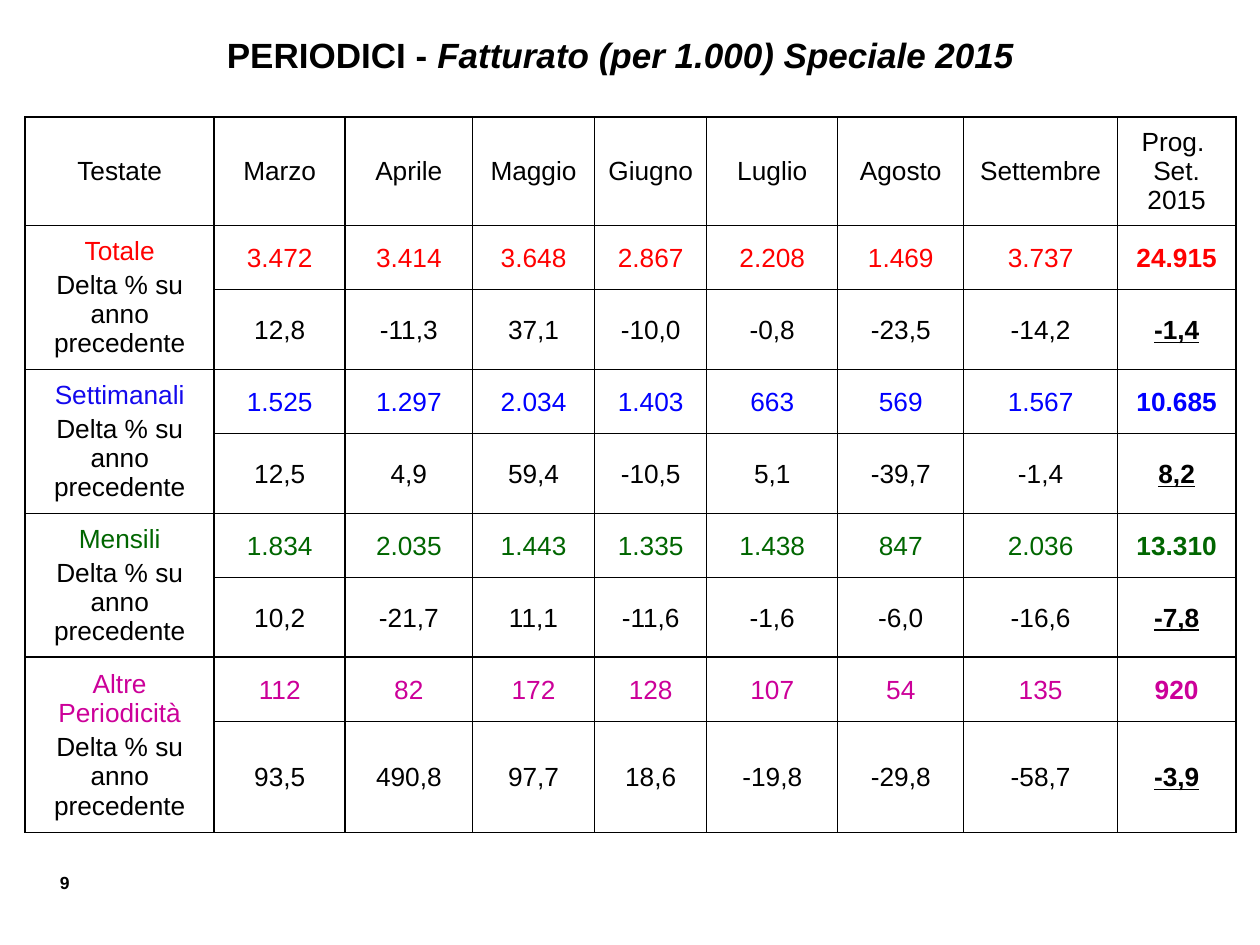
"""Build the slide on special 2015 periodical turnover by month."""
from lxml.etree import SubElement
from pptx import Presentation
from pptx.dml.color import RGBColor
from pptx.enum.text import MSO_ANCHOR, PP_ALIGN
from pptx.oxml.ns import qn
from pptx.util import Inches, Pt

MONTHS = ["Marzo", "Aprile", "Maggio", "Giugno", "Luglio", "Agosto", "Settembre"]
GROUPS = [
    ("Totale", "FF0000", "FF0000",
     "3.472 3.414 3.648 2.867 2.208 1.469 3.737 24.915",
     "12,8 -11,3 37,1 -10,0 -0,8 -23,5 -14,2 -1,4"),
    ("Settimanali", "1409ED", "0000FF",
     "1.525 1.297 2.034 1.403 663 569 1.567 10.685",
     "12,5 4,9 59,4 -10,5 5,1 -39,7 -1,4 8,2"),
    ("Mensili", "006600", "006600",
     "1.834 2.035 1.443 1.335 1.438 847 2.036 13.310",
     "10,2 -21,7 11,1 -11,6 -1,6 -6,0 -16,6 -7,8"),
    ("Altre Periodicità", "CC0099", "CC0099",
     "112 82 172 128 107 54 135 920",
     "93,5 490,8 97,7 18,6 -19,8 -29,8 -58,7 -3,9"),
]
COLUMN_WIDTHS = [1.5, 1.04, 1.01, 0.97, 0.89, 1.04, 1, 1.22, 0.94]
ROW_HEIGHTS = [0.86] + [0.51, 0.63] * 3 + [0.51, 0.88]
LABEL_MARGINS = (0.1, 0.05, 0.1, 0.05)
VALUE_MARGINS = (0.01, 0.01, 0.01, 0)


def rgb(value):
    return RGBColor.from_string(value)


class SlideWriter:
    font = "Arial"
    black = "000000"
    cell_size = 15
    border_width = 1

    def __init__(self, slide):
        self.slide = slide

    def format(self, paragraph, size, color=black, bold=False, align=PP_ALIGN.CENTER):
        paragraph.alignment = align
        font = paragraph.font
        font.name, font.size, font.bold = self.font, Pt(size), bold
        font.color.rgb = rgb(color)

    def title(self, lead, subject, box):
        heading = self.slide.shapes.title
        heading.left, heading.top, heading.width, heading.height = map(Inches, box)
        heading.text_frame.vertical_anchor = MSO_ANCHOR.MIDDLE
        paragraph = heading.text_frame.paragraphs[0]
        paragraph.add_run().text = lead
        italic_part = paragraph.add_run()
        italic_part.text = subject
        italic_part.font.italic = True
        self.format(paragraph, 20, bold=True)

    def page_number(self, number, box):
        frame = self.slide.shapes.add_textbox(*map(Inches, box)).text_frame
        frame.word_wrap = True
        frame.text = number
        self.format(frame.paragraphs[0], 10, bold=True, align=PP_ALIGN.RIGHT)

    def table(self, left, top, widths, heights):
        grid = self.slide.shapes.add_table(
            len(heights), len(widths), Inches(left), Inches(top),
            Inches(sum(widths)), Inches(sum(heights))).table
        grid.first_row = grid.horz_banding = False
        for column, width in zip(grid.columns, widths):
            column.width = Inches(width)
        for row, height in zip(grid.rows, heights):
            row.height = Inches(height)
        for cell in grid.iter_cells():
            self.border(cell)
            cell.fill.background()
        return grid

    def border(self, cell):
        properties = cell._tc.get_or_add_tcPr()
        for side in ("a:lnL", "a:lnR", "a:lnT", "a:lnB"):
            edge = SubElement(properties, qn(side), w=str(Pt(self.border_width)))
            SubElement(SubElement(edge, qn("a:solidFill")), qn("a:srgbClr"), val=self.black)

    def cell(self, cell, lines, margins=LABEL_MARGINS, bold=False, underline=False, gap=0):
        cell.vertical_anchor = MSO_ANCHOR.MIDDLE
        (cell.margin_left, cell.margin_top,
         cell.margin_right, cell.margin_bottom) = map(Inches, margins)
        frame = cell.text_frame
        frame.text = "\n".join(text for text, _ in lines)
        for index, (paragraph, (_, color)) in enumerate(zip(frame.paragraphs, lines)):
            self.format(paragraph, self.cell_size, color, bold)
            if underline:
                paragraph.font.underline = True
            if index and gap:
                paragraph.space_before = Pt(gap)

    def values(self, grid, row, figures, color, underline_total=False):
        last = len(figures)
        for column, figure in enumerate(figures, 1):
            total = column == last
            self.cell(grid.cell(row, column), [(figure, color)], VALUE_MARGINS,
                      bold=total, underline=total and underline_total)


def main():
    presentation = Presentation()
    presentation.slide_width, presentation.slide_height = Inches(10), Inches(7.5)
    writer = SlideWriter(presentation.slides.add_slide(presentation.slide_layouts[5]))
    black = writer.black

    writer.title("PERIODICI - ", "Fatturato (per 1.000) Speciale 2015", (0.2, 0.21, 9.45, 0.44))
    writer.page_number("9", (0.19, 6.87, 0.46, 0.27))

    turnover = writer.table(0.2, 0.93, COLUMN_WIDTHS, ROW_HEIGHTS)
    headers = [["Testate"], *([month] for month in MONTHS), ["Prog. ", "Set. 2015"]]
    for column, lines in enumerate(headers):
        writer.cell(turnover.cell(0, column), [(line, black) for line in lines])
    for index, (name, name_color, color, amounts, deltas) in enumerate(GROUPS):
        row = 1 + 2 * index
        label = turnover.cell(row, 0)
        label.merge(turnover.cell(row + 1, 0))
        writer.cell(label, [(name, name_color), ("Delta % su anno precedente", black)], gap=3)
        writer.values(turnover, row, amounts.split(), color)
        writer.values(turnover, row + 1, deltas.split(), black, underline_total=True)

    presentation.save("out.pptx")


if __name__ == "__main__":
    main()
